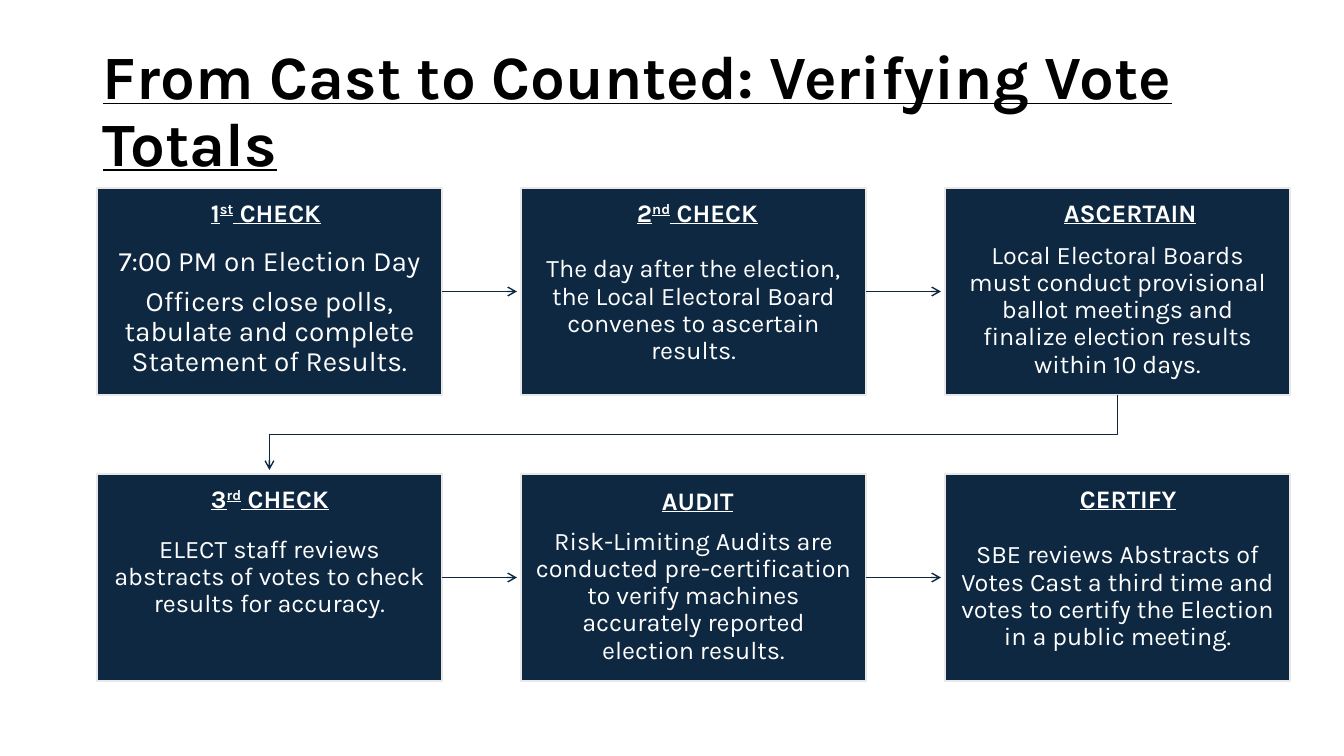
from collections import namedtuple

from lxml import etree
from pptx import Presentation
from pptx.dml.color import RGBColor
from pptx.enum.shapes import MSO_CONNECTOR, MSO_SHAPE
from pptx.enum.text import MSO_ANCHOR, MSO_AUTO_SIZE, PP_ALIGN
from pptx.oxml.ns import qn
from pptx.util import Emu, Pt

RECTANGLE = MSO_SHAPE.RECTANGLE
STRAIGHT = MSO_CONNECTOR.STRAIGHT
MIDDLE, TOP = MSO_ANCHOR.MIDDLE, MSO_ANCHOR.TOP
LEFT, CENTER = PP_ALIGN.LEFT, PP_ALIGN.CENTER
NO_AUTOFIT = MSO_AUTO_SIZE.NONE

NAVY = RGBColor(0x0E, 0x28, 0x41)
PALE_GRAY = RGBColor(0xE8, 0xE8, 0xE8)
WHITE = RGBColor(0xFF, 0xFF, 0xFF)
BLACK = RGBColor(0x00, 0x00, 0x00)

FONT = "Karla"
SLIDE_WIDTH, SLIDE_HEIGHT = 1344, 756
EMU_PER_PX = 12192000 / SLIDE_WIDTH
RIGHT_SIDE = 3
COLUMNS = 3
COLUMN_STEP, ROW_STEP = 424, 286
CARD_WIDTH, CARD_HEIGHT = 345, 207
ARROW_GAP = 4

Box = namedtuple("Box", "left top width height")
Step = namedtuple("Step", "heading heading_left heading_top body size inset body_top")

TITLE_BOX = Box(93, 40, 1159, 146)
FLOW_BOX = Box(97, 188, 1193, 493)

STEPS = [
    Step(("1", "st", " CHECK"), 104, 4,
         ["7:00 PM on Election Day",
          "Officers close polls, tabulate and complete Statement of Results."], 20, 16, 58),
    Step(("2", "nd", " CHECK"), 106, 4,
         ["The day after the election, the Local Electoral Board convenes to ascertain results."],
         18, 14, 52),
    Step(("ASCERTAIN",), 109, 4,
         ["Local Electoral Boards must conduct provisional ballot meetings and finalize "
          "election results within 10 days."], 18, 14, 52),
    Step(("3", "rd", " CHECK"), 104, 4,
         ["ELECT staff reviews abstracts of votes to check results for accuracy."], 18, 14, 14),
    Step(("AUDIT",), 131, 6,
         ["Risk-Limiting Audits are conducted pre-certification to verify machines "
          "accurately reported election results."], 18, 14, 52),
    Step(("CERTIFY",), 125, 4,
         ["SBE reviews Abstracts of Votes Cast a third time and votes to certify the "
          "Election in a public meeting."], 18, 14, 52),
]


def px(length):
    """Turn a length in px into EMU."""
    return Emu(round(length * EMU_PER_PX))


def place(box):
    """Give the EMU position and size of a box."""
    return [px(length) for length in box]


def add_run(paragraph, text, size, color, heading=False):
    """Add one formatted run and return it."""
    run = paragraph.add_run()
    run.text = text
    font = run.font
    font.name, font.size = FONT, Pt(size)
    font.color.rgb = color
    font.bold = font.underline = heading
    return run


def set_frame(frame, anchor, insets):
    """Set wrapping, anchor and the left, top, right and bottom insets."""
    frame.word_wrap = True
    frame.auto_size = NO_AUTOFIT
    frame.vertical_anchor = anchor
    (frame.margin_left, frame.margin_top,
     frame.margin_right, frame.margin_bottom) = [px(inset) for inset in insets]


def style_arrow(arrow):
    """Give a line its colour, width and open arrowhead."""
    arrow.line.color.rgb = NAVY
    arrow.line.width = Pt(1)
    line = arrow.line._get_or_add_ln()
    etree.SubElement(line, qn("a:tailEnd"), type="arrow")


def add_title(slide, box):
    """Fill the title placeholder."""
    title = slide.shapes.title
    title.left, title.top, title.width, title.height = place(box)
    set_frame(title.text_frame, MIDDLE, (10, 5, 10, 5))
    paragraph = title.text_frame.paragraphs[0]
    paragraph.alignment = LEFT
    paragraph.line_spacing = 0.9
    add_run(paragraph, "From Cast to Counted: Verifying Vote Totals", 44, BLACK, True)


def add_heading(slide, box, step):
    """Write the underlined heading of a card, with its raised ordinal."""
    heading_box = Box(box.left + step.heading_left, box.top + step.heading_top, 230, 40)
    frame = slide.shapes.add_textbox(*place(heading_box)).text_frame
    set_frame(frame, TOP, (10, 5, 10, 5))
    for index, text in enumerate(step.heading):
        run = add_run(frame.paragraphs[0], text, 18, WHITE, True)
        if index == 1:
            run.font._element.set("baseline", "30000")


def add_card(slide, box, step):
    """Draw one step card with its body text and heading."""
    card = slide.shapes.add_shape(RECTANGLE, *place(box))
    card.shadow.inherit = False
    card.fill.solid()
    card.fill.fore_color.rgb = NAVY
    card.line.color.rgb = PALE_GRAY
    card.line.width = Pt(1.5)
    frame = card.text_frame
    set_frame(frame, MIDDLE, (step.inset, step.body_top, step.inset, step.inset))
    for index, text in enumerate(step.body):
        paragraph = frame.add_paragraph() if index else frame.paragraphs[0]
        paragraph.alignment = CENTER
        paragraph.line_spacing = 0.9
        if index < len(step.body) - 1:
            paragraph.space_after = Pt(7)
        add_run(paragraph, text, step.size, WHITE)
    add_heading(slide, box, step)
    return card


def add_next_arrow(slide, card, box):
    """Point from the right side of a card to the next one in its row."""
    middle = px(box.top + box.height / 2)
    end = px(box.left + COLUMN_STEP - ARROW_GAP)
    arrow = slide.shapes.add_connector(STRAIGHT, px(box.left + box.width), middle, end, middle)
    arrow.begin_connect(card, RIGHT_SIDE)
    style_arrow(arrow)
    etree.SubElement(arrow._element.spPr, qn("a:effectLst"))


def add_row_arrow(slide, start_box, end_box):
    """Lead from the last card of a row down to the first of the next."""
    start_x = start_box.left + start_box.width / 2
    start_y = start_box.top + start_box.height
    end_x = end_box.left + end_box.width / 2
    turn_y = (start_y + end_box.top) / 2
    builder = slide.shapes.build_freeform(px(start_x), px(start_y))
    corners = [(start_x, turn_y), (end_x, turn_y), (end_x, end_box.top - ARROW_GAP)]
    builder.add_line_segments([(px(x), px(y)) for x, y in corners], close=False)
    arrow = builder.convert_to_shape()
    arrow.shadow.inherit = False
    arrow.fill.background()
    style_arrow(arrow)


def add_flow(slide, box):
    """Lay the steps out in two rows and join them with arrows."""
    card_boxes = []
    for index, step in enumerate(STEPS):
        row, column = divmod(index, COLUMNS)
        card_box = Box(box.left + column * COLUMN_STEP, box.top + row * ROW_STEP,
                       CARD_WIDTH, CARD_HEIGHT)
        card = add_card(slide, card_box, step)
        card_boxes.append(card_box)
        if column < COLUMNS - 1:
            add_next_arrow(slide, card, card_box)
    add_row_arrow(slide, card_boxes[COLUMNS - 1], card_boxes[COLUMNS])


def main():
    """Build and save the slide."""
    presentation = Presentation()
    presentation.slide_width = px(SLIDE_WIDTH)
    presentation.slide_height = px(SLIDE_HEIGHT)
    slide = presentation.slides.add_slide(presentation.slide_layouts[5])
    add_title(slide, TITLE_BOX)
    add_flow(slide, FLOW_BOX)
    presentation.save("out.pptx")


if __name__ == "__main__":
    main()
